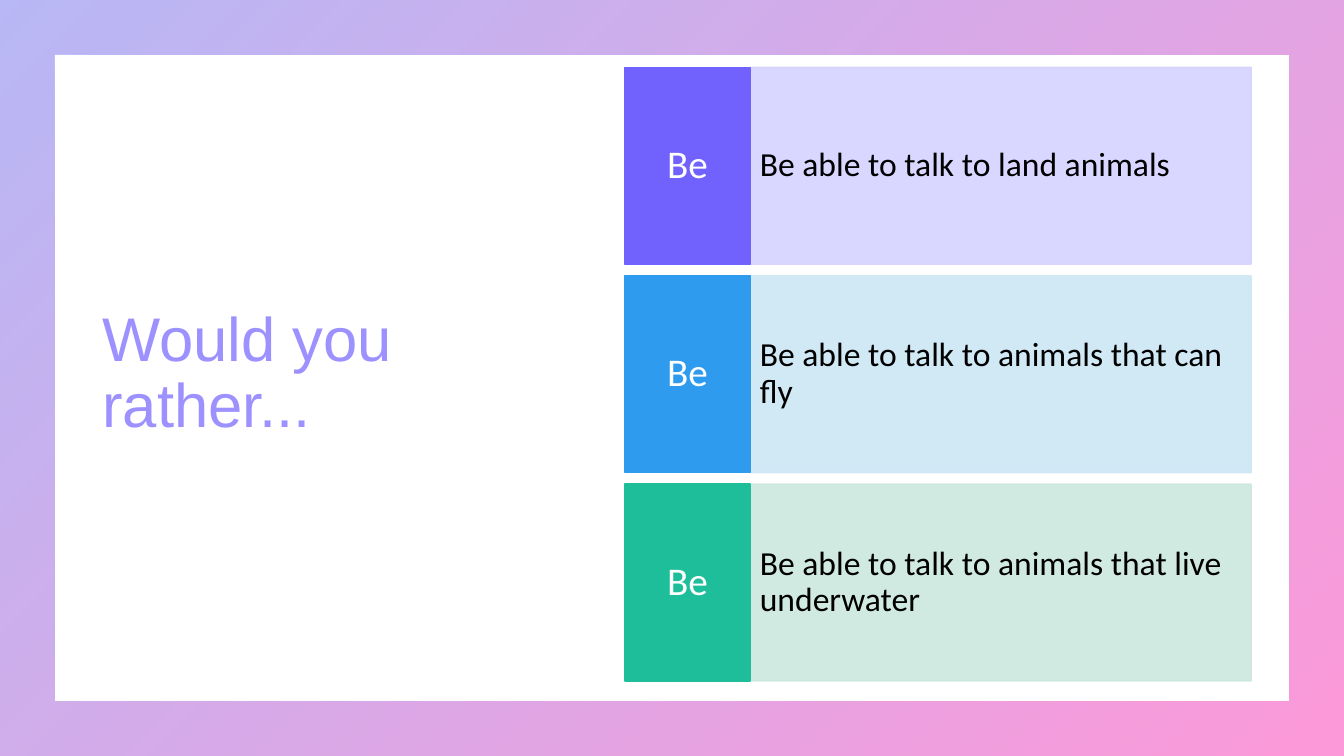
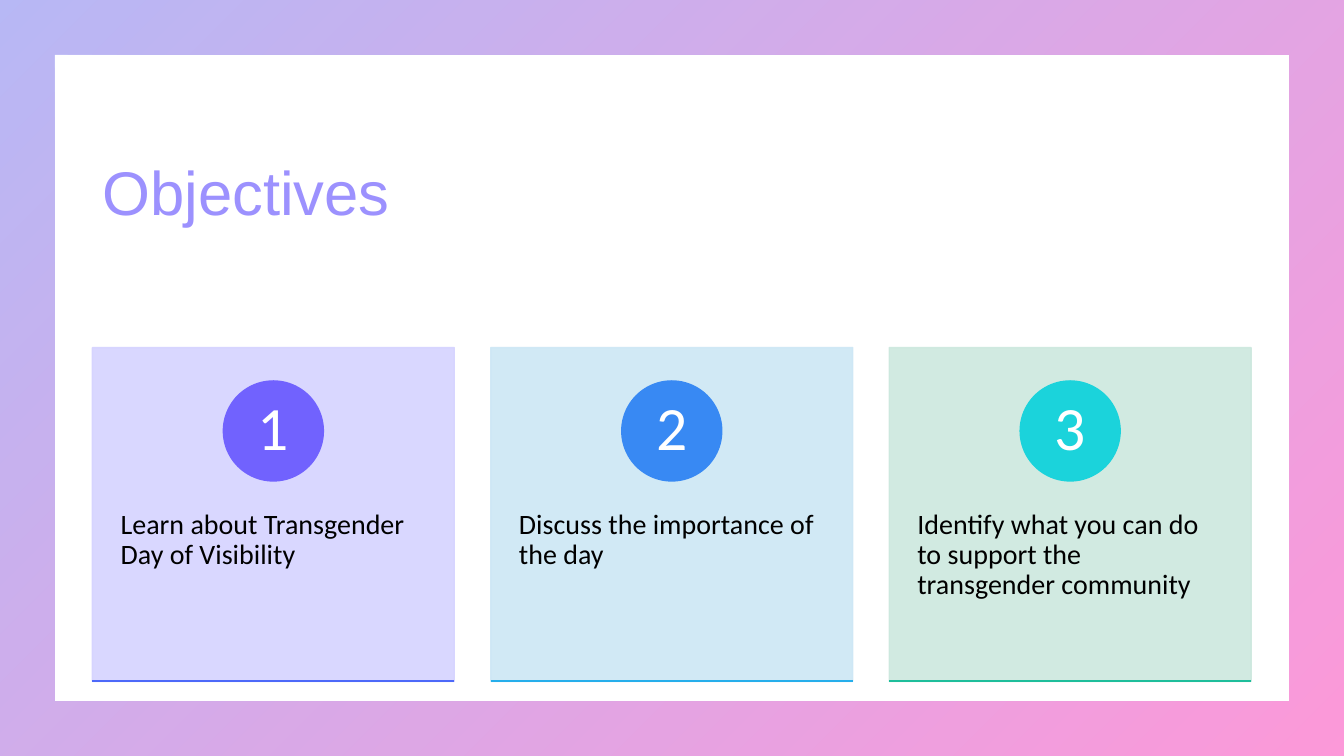
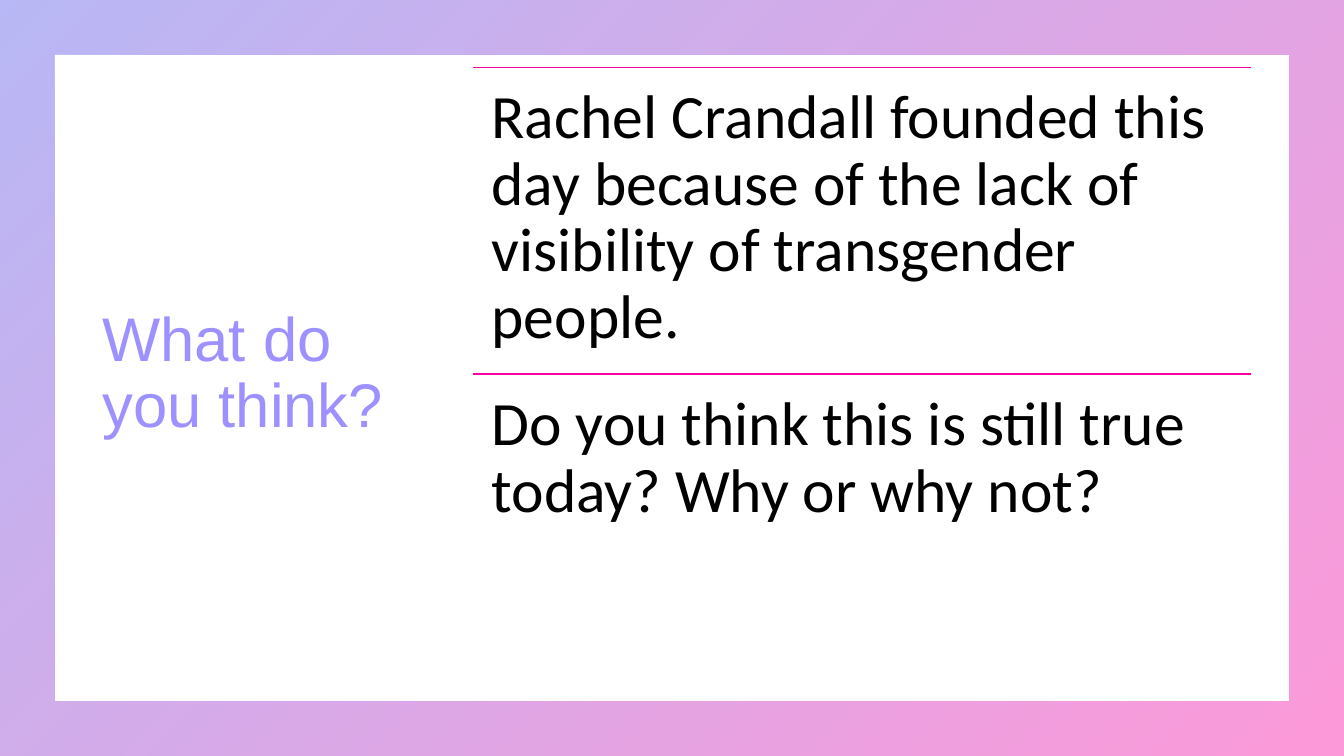
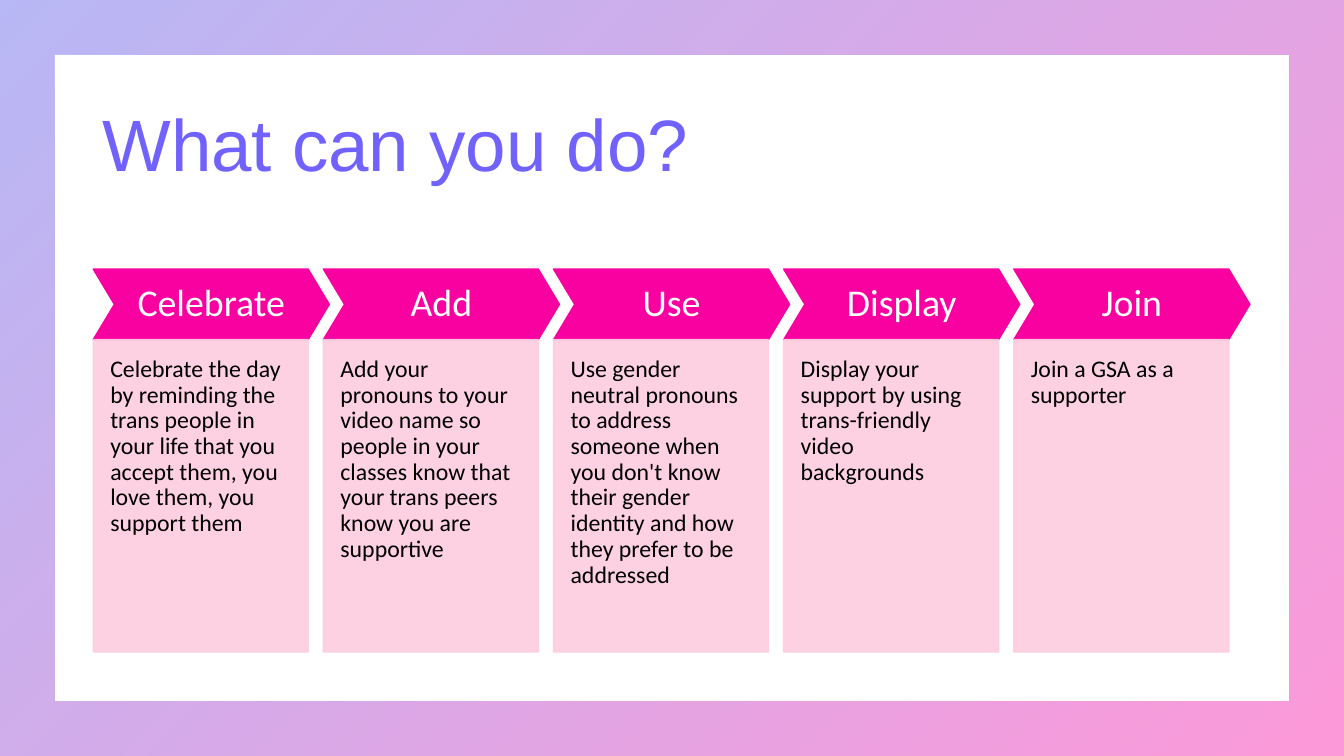
from lxml import etree
from pptx import Presentation
from pptx.dml.color import RGBColor
from pptx.enum.shapes import MSO_CONNECTOR as Connector, MSO_SHAPE as Preset
from pptx.enum.text import MSO_ANCHOR as Anchor, PP_ALIGN as Align
from pptx.oxml import parse_xml
from pptx.oxml.ns import nsdecls, qn
from pptx.util import Cm, Pt

WHITE = RGBColor(0xFF, 0xFF, 0xFF)
BLACK = RGBColor(0x00, 0x00, 0x00)
INDIGO = RGBColor(0x4D, 0x4E, 0xE6)
VIOLET = RGBColor(0x71, 0x62, 0xFE)
SOFT_VIOLET = RGBColor(0x9C, 0x91, 0xFE)
ROYAL = RGBColor(0x4D, 0x69, 0xF9)
AZURE = RGBColor(0x38, 0x89, 0xF3)
BLUE = RGBColor(0x2F, 0x9B, 0xEF)
SKY = RGBColor(0x26, 0xAE, 0xEB)
CYAN = RGBColor(0x1B, 0xD3, 0xDB)
GREEN = RGBColor(0x1E, 0xBE, 0x9B)
PINK = RGBColor(0xF9, 0x00, 0xA0)
PALE_VIOLET = RGBColor(0xD5, 0xD3, 0xFF)
PALE_BLUE = RGBColor(0xCD, 0xE7, 0xF5)
PALE_GREEN = RGBColor(0xCC, 0xE8, 0xDE)
PALE_PINK = RGBColor(0xFD, 0xCC, 0xDF)

TITLE_FONT = "Arial"
BODY_FONT = "Calibri"
SLIDE_WIDTH, SLIDE_HEIGHT = 33.87, 19.05
LEFT, TOP, RIGHT = 2.33, 1.7, 31.53
PANEL_OPACITY = 90
FRAME_OPACITY = 40


def area(left, top, width, height):
    return Cm(left), Cm(top), Cm(width), Cm(height)


def write(box, text, size, color, align=Align.LEFT, anchor=Anchor.TOP,
          margins=(0.25, 0.13), font=BODY_FONT):
    frame = box.text_frame
    frame.word_wrap = True
    frame.vertical_anchor = anchor
    frame.margin_left = frame.margin_right = Cm(margins[0])
    frame.margin_top = frame.margin_bottom = Cm(margins[1])
    frame.text = text
    para = frame.paragraphs[0]
    para.alignment = align
    para.line_spacing = 0.9
    for span in para.runs:
        span.font.name = font
        span.font.size = Pt(size)
        span.font.color.rgb = color


def add_block(page, preset, place, color, opacity=100):
    box = page.shapes.add_shape(preset, *area(*place))
    box.shadow.inherit = False
    box.fill.solid()
    box.fill.fore_color.rgb = color
    box.line.color.rgb = color
    box.line.width = Pt(1)
    if opacity < 100:
        for tint in box._element.spPr.iter(qn("a:srgbClr")):
            etree.SubElement(tint, qn("a:alpha")).set("val", str(opacity * 1000))
    return box


def add_label(page, place, text, size, margins):
    box = page.shapes.add_textbox(*area(*place))
    write(box, text, size, BLACK, margins=margins)


def add_rule(page, left, top, width, color, weight):
    rule = page.shapes.add_connector(
        Connector.STRAIGHT, Cm(left), Cm(top), Cm(left + width), Cm(top))
    rule.line.color.rgb = color
    rule.line.width = Pt(weight)
    etree.SubElement(rule._element.spPr, qn("a:effectLst"))


def add_page(deck, title, place, size=44, color=SOFT_VIOLET):
    page = deck.slides.add_slide(deck.slide_layouts[5])
    box = page.shapes.title
    box.left, box.top, box.width, box.height = area(*place)
    write(box, title, size, color, anchor=Anchor.MIDDLE, font=TITLE_FONT)
    return page


def frame_layout(page):
    border = page.shapes.add_shape(Preset.FRAME, *area(0, 0, SLIDE_WIDTH, SLIDE_HEIGHT))
    border.adjustments[0] = 0.072
    border.shadow.inherit = False
    border.line.fill.background()
    stops = "".join(
        f'<a:gs pos="{position}"><a:srgbClr val="{color}">'
        f'<a:alpha val="{FRAME_OPACITY * 1000}"/></a:srgbClr></a:gs>'
        for position, color in ((0, INDIGO), (100000, PINK)))
    gradient = parse_xml(
        f'<a:gradFill {nsdecls("a")} rotWithShape="1"><a:gsLst>{stops}</a:gsLst>'
        '<a:lin ang="2700000" scaled="0"/></a:gradFill>')
    border._element.spPr.find(qn("a:prstGeom")).addnext(gradient)
    page.slide_layout.shapes.element.insert(2, border._element)


def build_choices(deck):
    page = add_page(deck, "Would you rather...", (LEFT, TOP, 12.34, 15.47))
    choices = (
        ("Be able to talk to land animals", VIOLET, PALE_VIOLET),
        ("Be able to talk to animals that can fly", BLUE, PALE_BLUE),
        ("Be able to talk to animals that live underwater", GREEN, PALE_GREEN),
    )
    left, tab_width, height, step = 15.75, 3.15, 4.96, 5.25
    panel_left = left + tab_width
    for index, (text, strong, pale) in enumerate(choices):
        top = TOP + index * step
        panel = add_block(page, Preset.RECTANGLE,
                          (panel_left, top, RIGHT - panel_left, height), pale, PANEL_OPACITY)
        write(panel, text, 24, BLACK, anchor=Anchor.MIDDLE, margins=(0.25, 1.27))
        tab = add_block(page, Preset.RECTANGLE, (left, top, tab_width, height), strong)
        write(tab, "Be", 28, WHITE, Align.CENTER, Anchor.MIDDLE, (0.18, 0.48))
    return page


def build_objectives(deck):
    page = add_page(deck, "Objectives", (LEFT, TOP, 29.21, 6.45))
    objectives = (
        ("Learn about Transgender Day of Visibility", VIOLET, PALE_VIOLET, ROYAL),
        ("Discuss the importance of the day", AZURE, PALE_BLUE, SKY),
        ("Identify what you can do to support the transgender community",
         CYAN, PALE_GREEN, GREEN),
    )
    top, width, height, step, disc, inset = 8.76, 9.12, 8.41, 10.04, 2.52, 0.71
    for index, (text, strong, pale, edge) in enumerate(objectives):
        left = LEFT + index * step
        add_block(page, Preset.RECTANGLE, (left, top, width, height), pale, PANEL_OPACITY)
        add_label(page, (left + inset, 12.85, width - 2 * inset, 3.21), text, 20, (0, 0))
        badge = add_block(page, Preset.OVAL,
                          (left + (width - disc) / 2, 9.6, disc, disc), strong)
        write(badge, str(index + 1), 44, WHITE, Align.CENTER, Anchor.MIDDLE, (0.2, 0.03))
        add_rule(page, left, top + height, width, edge, 1.5)


def build_question(deck):
    page = add_page(deck, "What do you think?", (LEFT, TOP, 8.89, 15.47))
    statements = (
        "Rachel Crandall founded this day because of the lack of visibility "
        "of transgender people.",
        "Do you think this is still true today? Why or why not?",
    )
    left, height = 11.93, 7.73
    width = RIGHT - left
    for index, text in enumerate(statements):
        top = TOP + index * height
        add_rule(page, left, top, width, PINK, 1.25)
        add_label(page, (left, top, width, height), text, 44, (0.46, 0.46))


def build_actions(deck):
    page = add_page(deck, "What can you do?", (LEFT, 1.88, 29.21, 3.68), 52, VIOLET)
    actions = (
        ("Celebrate", "Celebrate the day by reminding the trans people in your life "
         "that you accept them, you love them, you support them"),
        ("Add", "Add your pronouns to your video name so people in your classes know "
         "that your trans peers know you are supportive"),
        ("Use", "Use gender neutral pronouns to address someone when you don't know "
         "their gender identity and how they prefer to be addressed"),
        ("Display", "Display your support by using trans-friendly video backgrounds"),
        ("Join", "Join a GSA as a supporter"),
    )
    top, head_height, step = 6.78, 1.78, 5.8
    for index, (name, text) in enumerate(actions):
        left = LEFT + 0.02 + index * step
        head = add_block(page, Preset.CHEVRON, (left, top, 5.95, head_height), PINK)
        head.adjustments[0] = 0.3
        write(head, name, 27, WHITE, Align.CENTER, Anchor.MIDDLE, (0.1, 0.1))
        panel = add_block(page, Preset.RECTANGLE,
                          (left, top + head_height, 5.42, 7.87), PALE_PINK, PANEL_OPACITY)
        write(panel, text, 17, BLACK, margins=(0.43, 0.43))


def main():
    deck = Presentation()
    deck.slide_width, deck.slide_height = Cm(SLIDE_WIDTH), Cm(SLIDE_HEIGHT)
    frame_layout(build_choices(deck))
    build_objectives(deck)
    build_question(deck)
    build_actions(deck)
    deck.save("out.pptx")


if __name__ == "__main__":
    main()
